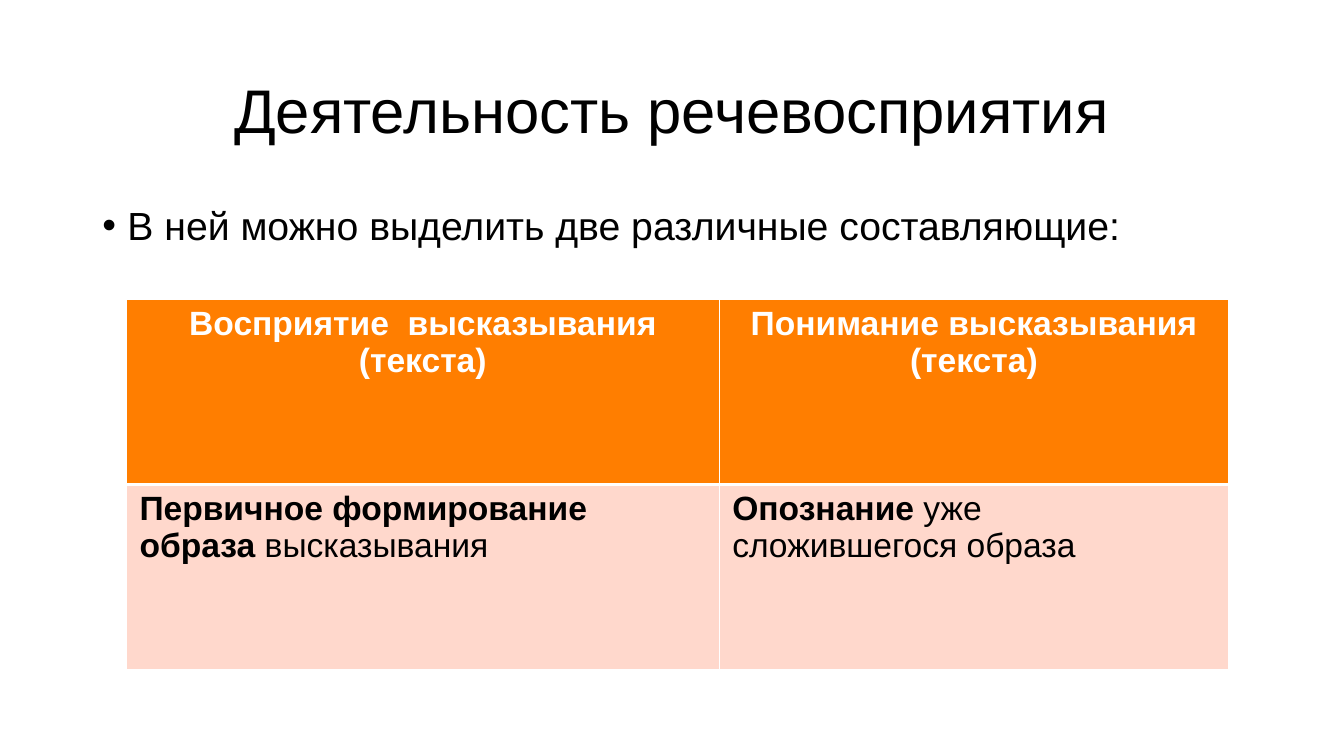
from lxml.etree import SubElement
from pptx import Presentation
from pptx.dml.color import RGBColor
from pptx.enum.text import MSO_ANCHOR, PP_ALIGN
from pptx.oxml.ns import qn
from pptx.util import Pt

COLORS = {"text": "000000", "light": "FFFFFF", "header": "FF7E00", "body": "FFD8CC"}
FONT = "Arial"
HEADINGS = ["Восприятие  высказывания (текста)", "Понимание высказывания (текста)"]
DESCRIPTIONS = [
    [("Первичное формирование образа ", True), ("высказывания", False)],
    [("Опознание", True), (" уже сложившегося образа", False)],
]
COLUMN_WIDTHS = [423.4, 363.9]
ROW_HEIGHT = 132.2


def add_run(paragraph, wording, size, color="text", bold=False):
    """Append one formatted run to a paragraph."""
    run = paragraph.add_run()
    run.text = wording
    run.font.name = FONT
    run.font.size = Pt(size)
    run.font.bold = bold
    run.font.color.rgb = RGBColor.from_string(COLORS[color])


def add_text_area(slide, box, wording, size, anchor):
    """Add a wrapped text area in the box and return its paragraph."""
    frame = slide.shapes.add_textbox(*map(Pt, box)).text_frame
    frame.word_wrap = True
    frame.vertical_anchor = anchor
    paragraph = frame.paragraphs[0]
    paragraph.line_spacing = 0.9
    add_run(paragraph, wording, size)
    return paragraph


def add_title(slide, box):
    """Place the centred slide title."""
    title = add_text_area(slide, box, "Деятельность речевосприятия", 44, MSO_ANCHOR.MIDDLE)
    title.alignment = PP_ALIGN.CENTER


def add_intro(slide, box):
    """Place the bulleted introductory sentence."""
    intro = add_text_area(
        slide, box, "В ней можно выделить две различные составляющие:", 28, MSO_ANCHOR.TOP
    )
    intro.space_before = Pt(10)
    properties = intro._p.get_or_add_pPr()
    properties.set("marL", str(Pt(18)))
    properties.set("indent", str(Pt(-18)))
    SubElement(properties, qn("a:buFont"), typeface=FONT)
    SubElement(properties, qn("a:buChar"), char="•")


def style_cell(cell, fill, border_widths):
    """Set the margins, borders and fill of a table cell."""
    cell.margin_left = cell.margin_right = Pt(9.36)
    cell.margin_top = cell.margin_bottom = Pt(3.6)
    properties = cell._tc.get_or_add_tcPr()
    for side, width in border_widths.items():
        line = SubElement(properties, qn(f"a:ln{side}"), w=str(Pt(width)))
        line_fill = SubElement(line, qn("a:solidFill"))
        SubElement(line_fill, qn("a:srgbClr"), val=COLORS["light"])
    cell.fill.solid()
    cell.fill.fore_color.rgb = RGBColor.from_string(COLORS[fill])


def add_components(slide, left, top):
    """Place the table of the two components of speech perception."""
    table = slide.shapes.add_table(
        2, 2, Pt(left), Pt(top), Pt(sum(COLUMN_WIDTHS)), Pt(2 * ROW_HEIGHT)
    ).table
    for row in table.rows:
        row.height = Pt(ROW_HEIGHT)
    for index, width in enumerate(COLUMN_WIDTHS):
        table.columns[index].width = Pt(width)
        heading, description = table.cell(0, index), table.cell(1, index)
        style_cell(heading, "header", {"L": 1, "R": 1, "T": 1, "B": 3})
        style_cell(description, "body", {"L": 1, "R": 1, "T": 3, "B": 1})
        paragraph = heading.text_frame.paragraphs[0]
        paragraph.alignment = PP_ALIGN.CENTER
        add_run(paragraph, HEADINGS[index], 24, "light", True)
        for wording, bold in DESCRIPTIONS[index]:
            add_run(description.text_frame.paragraphs[0], wording, 24, bold=bold)


def main():
    """Build and save the slide."""
    presentation = Presentation()
    presentation.slide_width, presentation.slide_height = Pt(960), Pt(540)
    slide = presentation.slides.add_slide(presentation.slide_layouts[6])
    add_title(slide, (66, 28.75, 828, 104.4))
    add_intro(slide, (66, 143.75, 828, 342.6))
    add_components(slide, 90.3, 214)
    presentation.save("out.pptx")


if __name__ == "__main__":
    main()
